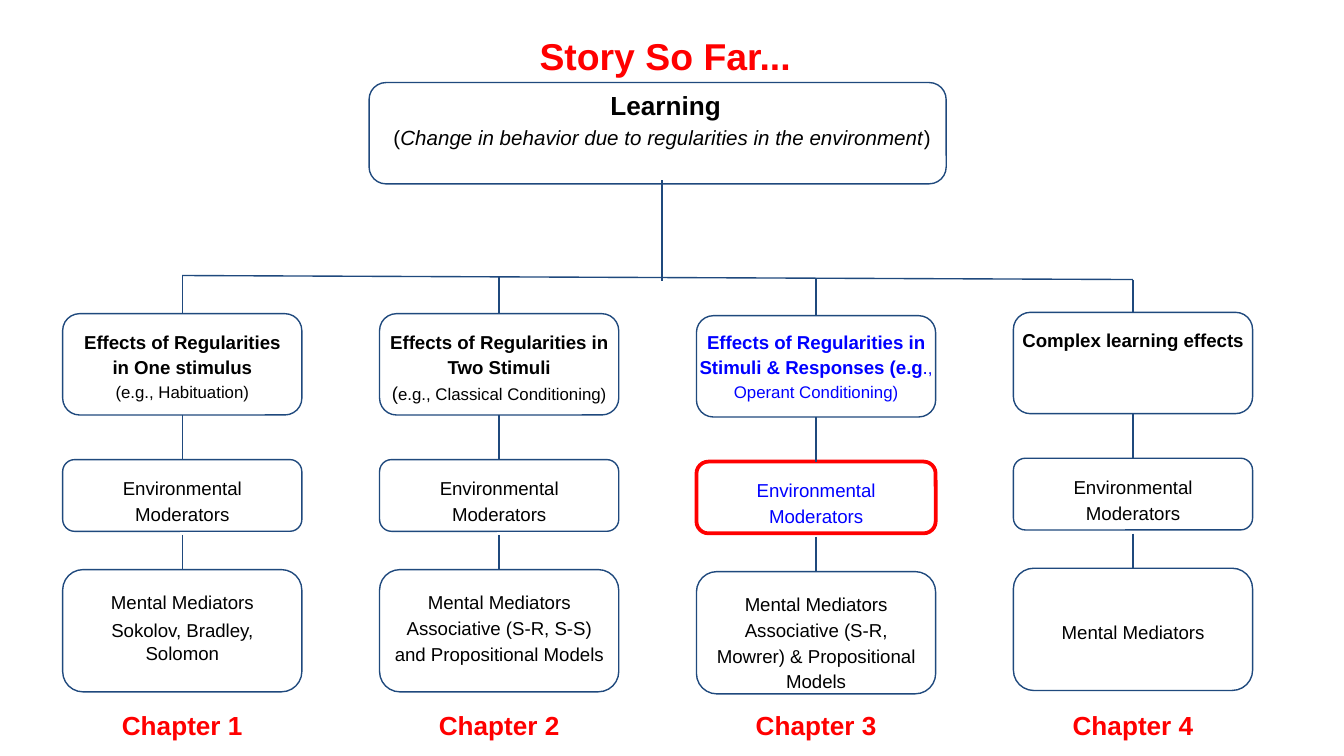
"""Build a slide that maps learning effects to four chapters."""
from dataclasses import dataclass

from pptx import Presentation
from pptx.dml.color import RGBColor
from pptx.enum.shapes import MSO_CONNECTOR, MSO_SHAPE
from pptx.enum.text import MSO_ANCHOR, MSO_AUTO_SIZE, PP_ALIGN
from pptx.oxml.xmlchemy import OxmlElement
from pptx.util import Inches, Pt

NAVY = RGBColor(0x1F, 0x49, 0x7D)
BLACK = RGBColor(0, 0, 0)
BLUE = RGBColor(0, 0, 0xFF)
RED = RGBColor(0xFF, 0, 0)

WIDTH = Inches(10)
HEIGHT = WIDTH * 9 // 16
GRID = WIDTH / 100
LEFT, SPAN = 4.66, 17.8
PITCH = 70.74 / 3
HALF = SPAN / 2


@dataclass(frozen=True)
class Area:
    x: float
    y: float
    w: float
    h: float


@dataclass(frozen=True)
class Run:
    text: str
    size: float = 10
    color: RGBColor = BLACK
    bold: bool = False
    slant: bool = False


@dataclass(frozen=True)
class Para:
    runs: tuple[Run, ...]
    space: float = 1.15
    before: float = 0


@dataclass(frozen=True)
class Column:
    head: tuple[Para, ...]
    mental: tuple[Para, ...]
    dip: float = 0
    flare: float = 0.8
    drop: float = 0
    ink: RGBColor = BLACK
    edge: RGBColor = NAVY
    weight: float = 0.75


def place(shape, area: Area) -> None:
    """Move a shape to an area of the grid."""
    shape.left, shape.top = round(area.x * GRID), round(area.y * GRID)
    shape.width, shape.height = round(area.w * GRID), round(area.h * GRID)


def write(shape, paras: tuple[Para, ...]) -> None:
    """Fill a shape with centred text, run by run."""
    frame = shape.text_frame
    frame.word_wrap = True
    frame.auto_size = MSO_AUTO_SIZE.NONE
    frame.vertical_anchor = MSO_ANCHOR.TOP
    frame.margin_left = frame.margin_right = round(GRID)
    frame.margin_top = frame.margin_bottom = round(GRID)
    for index, para in enumerate(paras):
        line = frame.add_paragraph() if index else frame.paragraphs[0]
        line.alignment = PP_ALIGN.CENTER
        line.line_spacing = para.space
        line.space_before = Pt(para.before)
        for part in para.runs:
            run = line.add_run()
            run.text = part.text
            font = run.font
            font.name, font.size = "Arial", Pt(part.size)
            font.bold, font.italic = part.bold, part.slant
            font.color.rgb = part.color


def label(slide, area: Area, *paras: Para) -> None:
    """Add a text box."""
    box = slide.shapes.add_textbox(0, 0, 0, 0)
    place(box, area)
    write(box, paras)


def frame(slide, area: Area, color: RGBColor = NAVY, weight: float = 0.75) -> None:
    """Add an open box with round corners."""
    box = slide.shapes.add_shape(MSO_SHAPE.ROUNDED_RECTANGLE, 0, 0, 0, 0)
    place(box, area)
    box.shadow.inherit = False
    box.fill.background()
    box.line.color.rgb = color
    box.line.width = Pt(weight)


def link(slide, x: float, y: float, end: float, low: float) -> None:
    """Add a plain line from (x, y) to (end, low)."""
    line = slide.shapes.add_connector(
        MSO_CONNECTOR.STRAIGHT, *(round(v * GRID) for v in (x, y, end, low)))
    line.line.color.rgb = NAVY
    line.line.width = Pt(0.75)
    line._element.spPr.append(OxmlElement("a:effectLst"))


def plain(text: str, **style) -> Para:
    """Make a paragraph of one run."""
    return Para((Run(text, **style),))


MENTAL = plain("Mental Mediators")
COLUMNS = (
    Column((plain("Effects of Regularities in One stimulus", bold=True),
            plain("(e.g., Habituation)", size=9)),
           (MENTAL, Para((Run("Sokolov, Bradley, Solomon"),), 1, 3)), flare=0),
    Column((plain("Effects of Regularities in Two Stimuli", bold=True),
            Para((Run("("), Run("e.g., Classical Conditioning)", 9)))),
           (MENTAL, plain("Associative (S-R, S-S) and Propositional Models"))),
    Column((Para((Run("Effects of Regularities in Stimuli & Responses (e.g", 10, BLUE, True),
                  Run(".", 10, BLUE),
                  Run(", Operant Conditioning)", 9, BLUE))),),
           (MENTAL, plain("Associative (S-R, Mowrer) & Propositional Models")),
           dip=0.15, ink=BLUE, edge=RED, weight=2),
    Column((plain("Complex learning effects", bold=True),), (MENTAL,),
           dip=-0.1, drop=2.3),
)


def stack(slide, index: int, column: Column) -> None:
    """Draw one chapter's column of boxes, links and words."""
    x, dip = LEFT + index * PITCH, column.dip
    mid = x + HALF
    frame(slide, Area(x, 23.34 + dip, SPAN, 7.54))
    frame(slide, Area(x, 34.2 + dip, SPAN, 5.34), column.edge, column.weight)
    frame(slide, Area(x, 42.38 + dip, SPAN, 9.1))
    for top, low in ((20.5 + index * 0.1, 23.34 + dip),
                     (30.88 + dip, 34.2 + dip), (39.8 + dip, 42.38 + dip)):
        link(slide, mid, top, mid, low)
    label(slide, Area(x - column.flare, 23.34 + min(dip, 0), SPAN + 2 * column.flare, 7.5),
          *column.head)
    label(slide, Area(x, 34.24 + dip, SPAN, 4.7),
          plain("Environmental Moderators", color=column.ink))
    label(slide, Area(x, 42.72 + dip + column.drop, SPAN, 8.4 - 2 * column.drop),
          *column.mental)
    label(slide, Area(x, 51.46, SPAN, 3.7),
          plain(f"Chapter {index + 1}", size=14, color=RED, bold=True))


def main() -> None:
    """Draw the slide and save it."""
    deck = Presentation()
    deck.slide_width, deck.slide_height = WIDTH, HEIGHT
    slide = deck.slides.add_slide(deck.slide_layouts[5])
    title = slide.shapes.title
    place(title, Area(33.3, 0.95, 32.4, 4.6))
    write(title, (plain("Story So Far...", size=20, color=RED, bold=True),))
    frame(slide, Area(27.46, 6.14, 42.94, 7.54))
    label(slide, Area(23.16, 5.34, 52.2, 8.1),
          plain(" Learning", size=14, bold=True),
          Para((Run("(", 11),
                Run("Change in behavior due to regularities in the environment", 11, slant=True),
                Run(")", 11))))
    link(slide, 49.26, 13.4, 49.26, 20.9)
    link(slide, LEFT + HALF, 20.5, LEFT + HALF + 3 * PITCH, 20.8)
    for index, column in enumerate(COLUMNS):
        stack(slide, index, column)
    deck.save("out.pptx")


if __name__ == "__main__":
    main()
